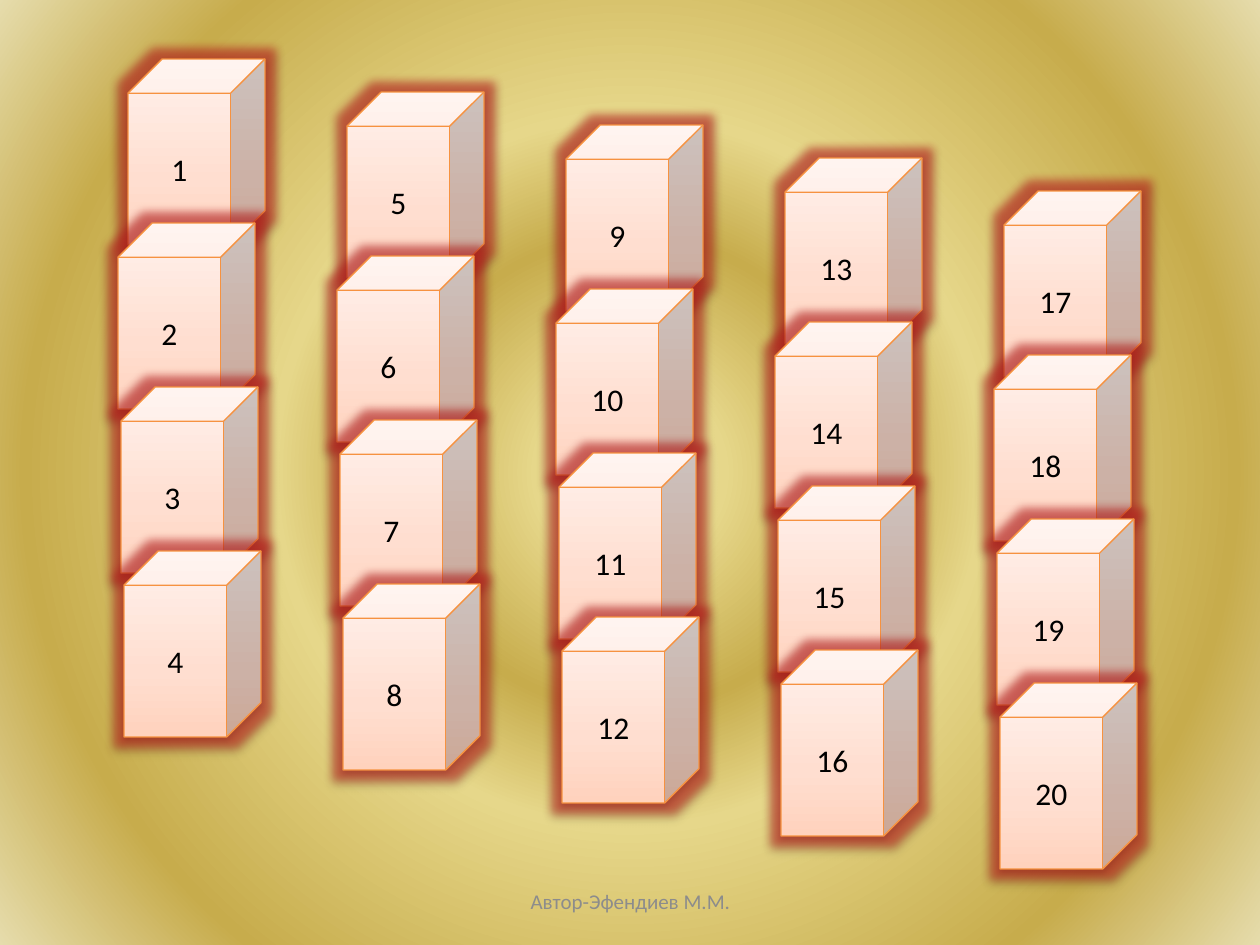
from pptx import Presentation
from pptx.dml.color import RGBColor
from pptx.enum.shapes import MSO_SHAPE
from pptx.enum.text import MSO_ANCHOR, PP_ALIGN
from pptx.oxml import parse_xml
from pptx.oxml.ns import nsdecls, qn
from pptx.util import Emu, Pt

EMU_PER_PX = 914400 / 126
COLUMNS, ROWS = 5, 4
FIRST_LEFT, FIRST_TOP = 128, 59
COLUMN_STEP, COLUMN_DROP, ROW_STEP = 219, 33, 164
ROW_SHIFTS = (0, -10, -7, -4)
CUBE_WIDTH, CUBE_HEIGHT = 137, 186

BACKDROP_STOPS = (
    (0, "E6DCAC", 100),
    (12, "E6D78A", 100),
    (30, "C7AC4C", 100),
    (45, "E6D78A", 83),
    (77, "C7AC4C", 100),
    (100, "E6DCAC", 100),
)
CUBE_STOPS = ((0, "FFD2BD", 100), (35, "FFDED0", 100), (100, "FFF2ED", 100))
RADIAL = (
    '<a:path path="circle">'
    '<a:fillToRect l="50000" t="50000" r="50000" b="50000"/></a:path>'
)
UPWARD = '<a:lin ang="16200000" scaled="1"/>'


def px(length):
    return Emu(round(length * EMU_PER_PX))


def color(value):
    return RGBColor.from_string(value)


def tint(value, alpha):
    opacity = f'<a:alpha val="{alpha * 1000}"/>' if alpha < 100 else ""
    return f'<a:srgbClr val="{value}">{opacity}</a:srgbClr>'


def gradient(stops, direction):
    marks = "".join(
        f'<a:gs pos="{position * 1000}">{tint(value, alpha)}</a:gs>'
        for position, value, alpha in stops
    )
    return (
        f'<a:gradFill {nsdecls("a")} rotWithShape="1">'
        f"<a:gsLst>{marks}</a:gsLst>{direction}</a:gradFill>"
    )


def apply(target, values):
    for name, value in values.items():
        setattr(target, name, value)


def paint_backdrop(slide):
    backdrop = parse_xml(
        f'<p:bg {nsdecls("p", "a")}><p:bgPr>'
        f"{gradient(BACKDROP_STOPS, RADIAL)}<a:effectLst/></p:bgPr></p:bg>"
    )
    slide.element.cSld.insert(0, backdrop)


def write_label(frame, text, size, hue):
    apply(frame, {"word_wrap": True, "vertical_anchor": MSO_ANCHOR.MIDDLE})
    paragraph = frame.paragraphs[0]
    paragraph.alignment = PP_ALIGN.CENTER
    run = paragraph.add_run()
    run.text = text
    apply(run.font, {"name": "Calibri", "size": Pt(size)})
    run.font.color.rgb = color(hue)


def add_glow_and_shadow(cube):
    cube.shadow.inherit = False
    effects = cube.element.spPr.find(qn("a:effectLst"))
    effects.append(parse_xml(
        f'<a:glow {nsdecls("a")} rad="139700">{tint("C81E1E", 55)}</a:glow>'
    ))
    effects.append(parse_xml(
        f'<a:outerShdw {nsdecls("a")} blurRad="40000" dist="20000" '
        f'dir="5400000" rotWithShape="0">{tint("000000", 38)}</a:outerShdw>'
    ))


def add_cube(slide, number, left, top):
    cube = slide.shapes.add_shape(
        MSO_SHAPE.CUBE, px(left), px(top), px(CUBE_WIDTH), px(CUBE_HEIGHT)
    )
    cube.line.color.rgb = color("F69240")
    cube.line.width = Pt(0.75)
    outline = cube.element.spPr.find(qn("a:ln"))
    outline.addprevious(parse_xml(gradient(CUBE_STOPS, UPWARD)))
    add_glow_and_shadow(cube)
    write_label(cube.text_frame, str(number), 18, "000000")


def add_cubes(slide):
    for column in range(COLUMNS):
        for row, shift in enumerate(ROW_SHIFTS):
            add_cube(
                slide,
                column * ROWS + row + 1,
                FIRST_LEFT + column * COLUMN_STEP + shift,
                FIRST_TOP + column * COLUMN_DROP + row * ROW_STEP,
            )


def add_author(slide):
    author = slide.shapes.add_textbox(px(431), px(876), px(399), px(50))
    write_label(author.text_frame, "Автор-Эфендиев М.М.", 12, "8C8C8C")


def main():
    deck = Presentation()
    apply(deck, {"slide_width": px(1260), "slide_height": px(945)})
    slide = deck.slides.add_slide(deck.slide_layouts[6])
    paint_backdrop(slide)
    add_cubes(slide)
    add_author(slide)
    deck.save("out.pptx")


if __name__ == "__main__":
    main()
